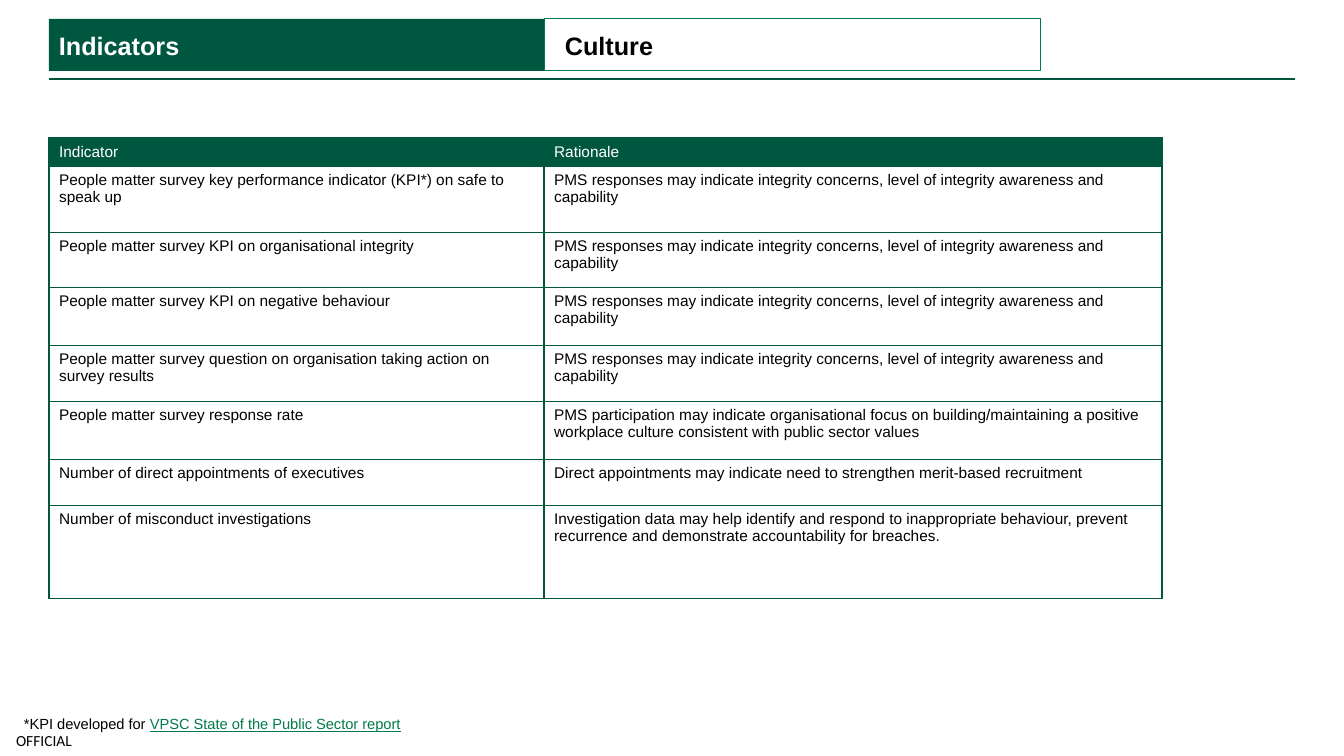
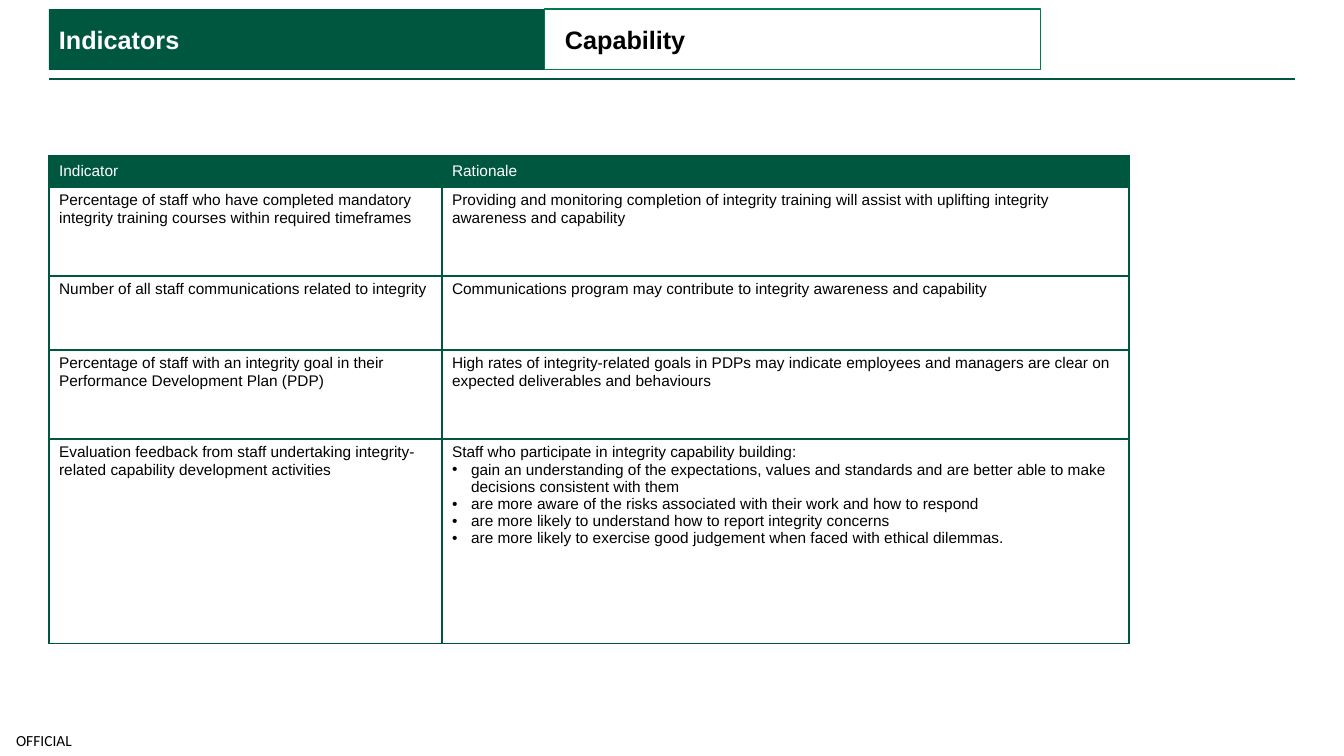
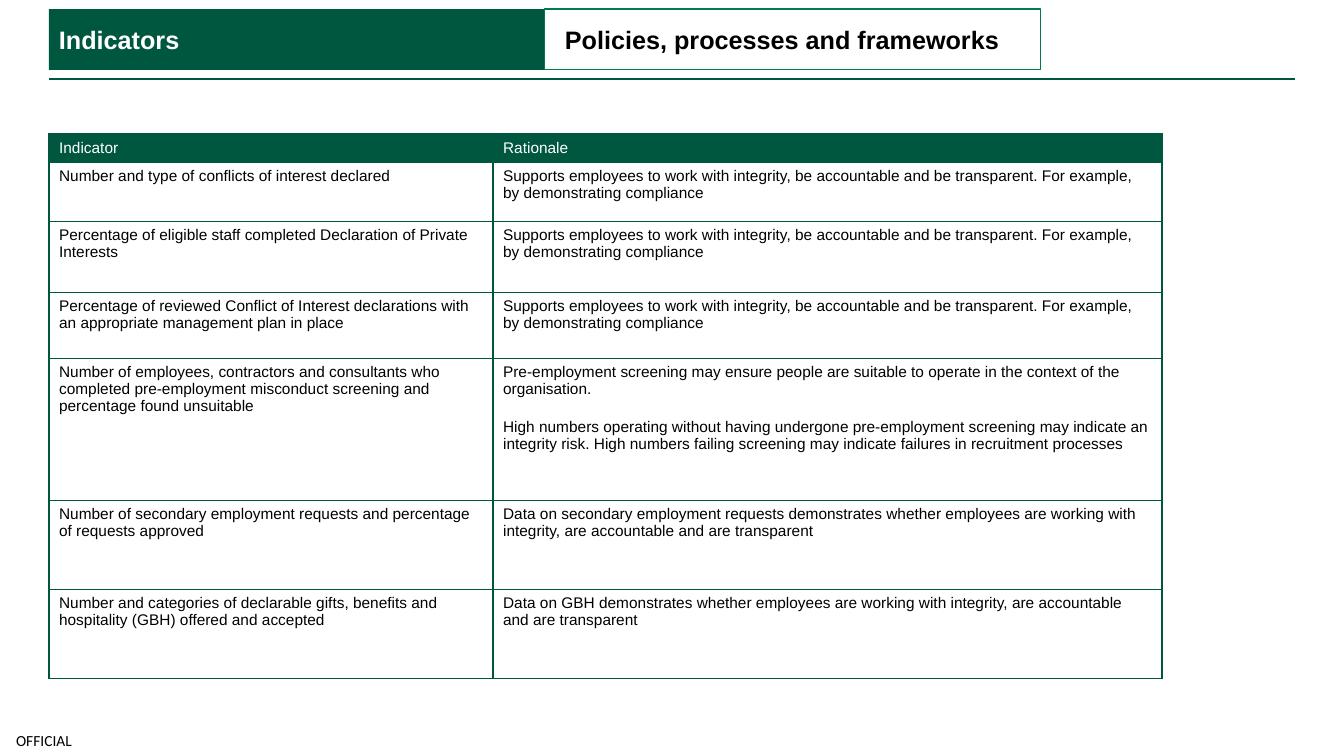
from lxml.etree import SubElement
from pptx import Presentation
from pptx.dml.color import RGBColor
from pptx.enum.shapes import MSO_CONNECTOR as Connector, MSO_SHAPE as Shape
from pptx.enum.text import MSO_ANCHOR as Anchor, PP_ALIGN as Align
from pptx.oxml.ns import qn
from pptx.util import Pt

EMU_PER_PX = 914400 / 100.8
DARK_GREEN = RGBColor(0x00, 0x57, 0x3F)
LINK_GREEN = RGBColor(0x00, 0x7B, 0x4B)
WHITE = RGBColor(0xFF, 0xFF, 0xFF)
BLACK = RGBColor(0x00, 0x00, 0x00)
LEFT = 49
TAB_WIDTH = 496
BULLET = "• "

SURVEY = ("PMS responses may indicate integrity concerns, level of integrity "
          "awareness and capability")
COMPLIANCE = ("Supports employees to work with integrity, be accountable and be "
              "transparent. For example, by demonstrating compliance")

CULTURE = [
    ("People matter survey key performance indicator (KPI*) on safe to speak up", SURVEY),
    ("People matter survey KPI on organisational integrity", SURVEY),
    ("People matter survey KPI on negative behaviour", SURVEY),
    ("People matter survey question on organisation taking action on survey results", SURVEY),
    ("People matter survey response rate",
     "PMS participation may indicate organisational focus on building/maintaining a "
     "positive workplace culture consistent with public sector values"),
    ("Number of direct appointments of executives",
     "Direct appointments may indicate need to strengthen merit-based recruitment"),
    ("Number of misconduct investigations",
     "Investigation data may help identify and respond to inappropriate behaviour, "
     "prevent recurrence and demonstrate accountability for breaches."),
]

CAPABILITY = [
    ("Percentage of staff who have completed mandatory integrity training courses "
     "within required timeframes",
     "Providing and monitoring completion of integrity training will assist with "
     "uplifting integrity awareness and capability"),
    ("Number of all staff communications related to integrity",
     "Communications program may contribute to integrity awareness and capability"),
    ("Percentage of staff with an integrity goal in their Performance Development Plan (PDP)",
     "High rates of integrity-related goals in PDPs may indicate employees and managers "
     "are clear on expected deliverables and behaviours"),
    ("Evaluation feedback from staff undertaking integrity-related capability "
     "development activities",
     "Staff who participate in integrity capability building:\n"
     "• gain an understanding of the expectations, values and standards and are better "
     "able to make decisions consistent with them\n"
     "• are more aware of the risks associated with their work and how to respond\n"
     "• are more likely to understand how to report integrity concerns\n"
     "• are more likely to exercise good judgement when faced with ethical dilemmas."),
]

POLICIES = [
    ("Number and type of conflicts of interest declared", COMPLIANCE),
    ("Percentage of eligible staff completed Declaration of Private Interests", COMPLIANCE),
    ("Percentage of reviewed Conflict of Interest declarations with an appropriate "
     "management plan in place", COMPLIANCE),
    ("Number of employees, contractors and consultants who completed pre-employment "
     "misconduct screening and percentage found unsuitable",
     "Pre-employment screening may ensure people are suitable to operate in the context "
     "of the organisation.\n"
     "High numbers operating without having undergone pre-employment screening may "
     "indicate an integrity risk. High numbers failing screening may indicate failures "
     "in recruitment processes"),
    ("Number of secondary employment requests and percentage of requests approved",
     "Data on secondary employment requests demonstrates whether employees are working "
     "with integrity, are accountable and are transparent"),
    ("Number and categories of declarable gifts, benefits and hospitality (GBH) offered "
     "and accepted",
     "Data on GBH demonstrates whether employees are working with integrity, are "
     "accountable and are transparent"),
]


def px(*lengths):
    """Turn pixel lengths into a list of EMU."""
    return [round(length * EMU_PER_PX) for length in lengths]


def style_font(font, size, color, name="Arial", bold=False):
    """Set the look of a font."""
    font.name, font.size, font.bold = name, Pt(size), bold
    font.color.rgb = color


class IndicatorDeck:
    """Holds the deck, its style and the current page."""

    def __init__(self):
        """Start an empty deck."""
        self.deck = Presentation()
        self.deck.slide_width, self.deck.slide_height = px(1344, 756)
        self.page = None

    def add_page(self, topic, tab_top, tab_height):
        """Add a page with its rule, footer and two title tabs."""
        self.page = self.deck.slides.add_slide(self.deck.slide_layouts[6])
        self.rule(LEFT, 79, 1295)
        footer = self.text(0, 725, 88, 31, ["OFFICIAL"], 11, "Calibri", inset=0)
        footer.vertical_anchor = Anchor.MIDDLE
        footer.paragraphs[0].alignment = Align.CENTER
        self.tab("Indicators", LEFT, tab_top, tab_height, DARK_GREEN, WHITE, 10)
        white_tab = self.tab(topic, LEFT + TAB_WIDTH, tab_top, tab_height, WHITE, BLACK, 20)
        white_tab.line.color.rgb = LINK_GREEN
        white_tab.line.width = Pt(0.75)

    def rule(self, left, top, right):
        """Draw a horizontal rule."""
        line = self.page.shapes.add_connector(Connector.STRAIGHT, *px(left, top, right, top))
        line.line.color.rgb = DARK_GREEN
        line.line.width = Pt(1)
        SubElement(line._element.spPr, qn("a:effectLst"))

    def text(self, left, top, width, height, spans, size, name="Arial", inset=10):
        """Add a one-paragraph text box and return its frame."""
        box = self.page.shapes.add_textbox(*px(left, top, width, height))
        frame = box.text_frame
        frame.word_wrap = True
        frame.margin_left, frame.margin_right = px(inset, inset)
        frame.margin_top, frame.margin_bottom = px(inset // 2, inset // 2)
        for words in spans:
            span = frame.paragraphs[0].add_run()
            span.text = words
            style_font(span.font, size, BLACK, name)
        return frame

    def tab(self, title, left, top, height, fill, color, inset):
        """Add a title tab."""
        tab = self.page.shapes.add_shape(Shape.RECTANGLE, *px(left, top, TAB_WIDTH, height))
        tab.shadow.inherit = False
        tab.fill.solid()
        tab.fill.fore_color.rgb = fill
        tab.line.fill.background()
        frame = tab.text_frame
        frame.text = title
        frame.word_wrap = True
        frame.vertical_anchor = Anchor.MIDDLE
        frame.margin_left, frame.margin_right = px(inset, 10)
        frame.margin_top, frame.margin_bottom = px(10, 10)
        para = frame.paragraphs[0]
        para.alignment = Align.LEFT
        style_font(para.font, 18, color, bold=True)
        return tab

    def table(self, top, widths, heights, rows):
        """Add the indicator table with its header row."""
        rows = [("Indicator", "Rationale"), *rows]
        frame = self.page.shapes.add_table(
            len(rows), len(widths), *px(LEFT, top, sum(widths), sum(heights)))
        table = frame.table
        table.horz_banding = False
        for column, width in zip(table.columns, px(*widths)):
            column.width = width
        for row, height in zip(table.rows, px(*heights)):
            row.height = height
        for row_index, row in enumerate(rows):
            for column_index, words in enumerate(row):
                self.cell(table.cell(row_index, column_index), words, row_index == 0)

    def cell(self, cell, words, header):
        """Fill one table cell, with borders and any bullets."""
        properties = cell._tc.get_or_add_tcPr()
        for side in ("lnL", "lnR", "lnT", "lnB"):
            border = SubElement(properties, qn(f"a:{side}"), w=str(Pt(1)))
            SubElement(SubElement(border, qn("a:solidFill")), qn("a:srgbClr"),
                       val=str(DARK_GREEN))
        cell.fill.solid()
        cell.fill.fore_color.rgb = DARK_GREEN if header else WHITE
        cell.vertical_anchor = Anchor.MIDDLE if header else Anchor.TOP
        cell.text_frame.text = words
        for index, para in enumerate(cell.text_frame.paragraphs):
            if para.text.startswith(BULLET):
                para.text = para.text.removeprefix(BULLET)
                self.bullet(para)
            elif index:
                para.space_before = Pt(15)
            style_font(para.font, 11, WHITE if header else BLACK)

    def bullet(self, para):
        """Give a paragraph a hanging bullet."""
        properties = para._p.get_or_add_pPr()
        indent, = px(19)
        properties.set("marL", str(indent))
        properties.set("indent", str(-indent))
        SubElement(properties, qn("a:buFont"), typeface="Arial")
        SubElement(properties, qn("a:buChar"), char=BULLET.strip())


def main():
    """Build and save the deck."""
    deck = IndicatorDeck()

    deck.add_page("Culture", 19, 52)
    deck.table(138, [495, 618], [28, 66, 55, 58, 56, 58, 46, 93], CULTURE)
    note = deck.text(14, 710, 519, 28,
                     ["*KPI developed for ", "VPSC State of the Public Sector report"], 10.5)
    report = note.paragraphs[0].runs[1]
    report.font.color.rgb = LINK_GREEN
    report.font.underline = True

    deck.add_page("Capability", 9, 61)
    deck.table(156, [393, 687], [31, 89, 74, 89, 205], CAPABILITY)

    deck.add_page("Policies, processes and frameworks", 9, 61)
    deck.table(134, [444, 669], [28, 59, 71, 66, 142, 89, 89], POLICIES)

    deck.deck.save("out.pptx")


if __name__ == "__main__":
    main()
